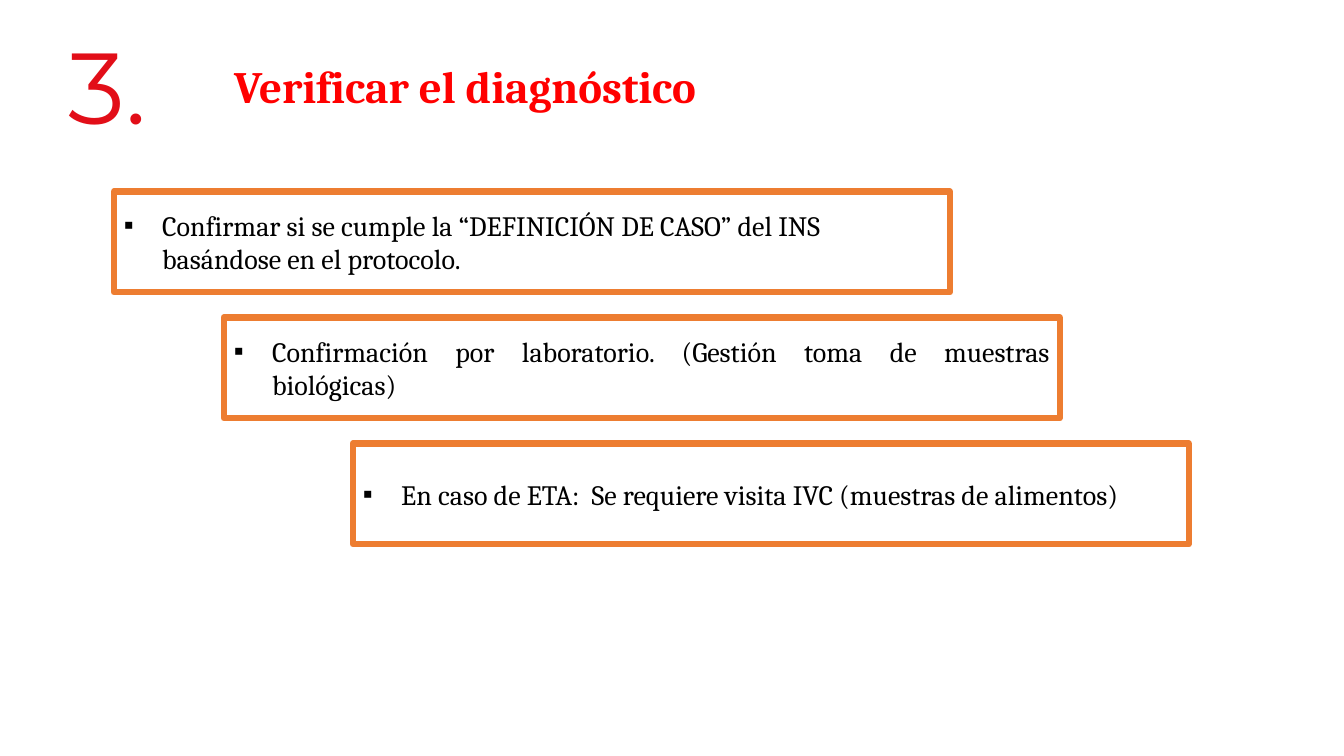
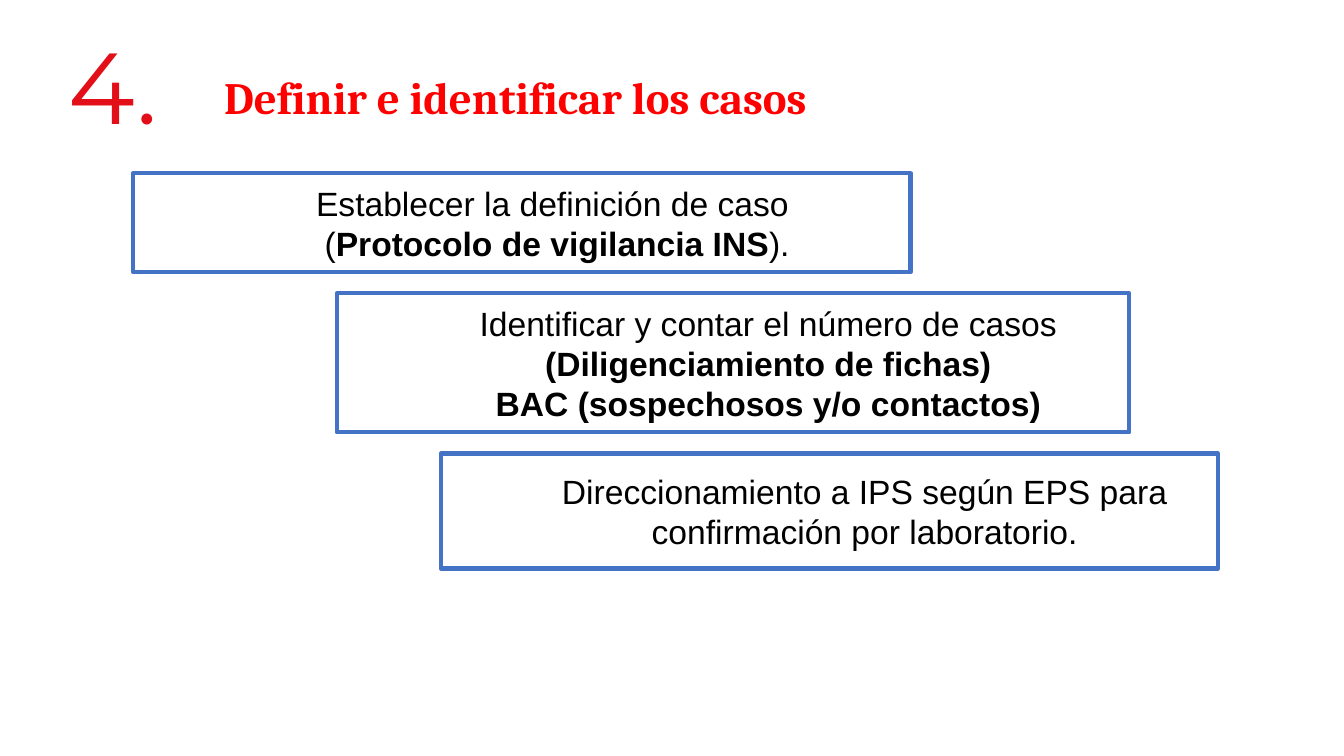
"""Builds two numbered step slides, each with a staircase of outlined boxes."""
from lxml import etree
from pptx import Presentation
from pptx.dml.color import RGBColor
from pptx.enum.shapes import MSO_SHAPE as SHAPE
from pptx.enum.text import MSO_ANCHOR as ANCHOR, MSO_AUTO_SIZE as AUTO, PP_ALIGN as AL
from pptx.oxml.ns import qn
from pptx.util import Inches, Pt

COLORS = {"number": "E20E18", "title": "FF0000", "text": "000000", "fill": "FFFFFF",
          "orange": "ED7D31", "blue": "4472C4"}
NUMBER_AT = (0.58, 0.19, 1.48, 1.31)

SLIDES = [
    {"number": "3.", "title": "Verificar el diagnóstico", "title_at": (1.58, 0.53, 6.07, 0.64),
     "line": ("orange", 4.5), "font": ("Cambria", 20), "bullet": "▪", "indent": 0.38,
     "top": 1.9, "gap": 0.25,
     "boxes": [
         (1.13, 8.29, 1, AL.LEFT,
          [[("Confirmar si se cumple la “DEFINICIÓN DE CASO” del INS basándose en el protocolo.", False)]]),
         (2.22, 8.29, 1, AL.JUSTIFY,
          [[("Confirmación por laboratorio. (Gestión toma de muestras biológicas)", False)]]),
         (3.5, 8.29, 1, AL.JUSTIFY,
          [[("En caso de ETA:  Se requiere visita IVC (muestras de alimentos)", False)]]),
     ]},
    {"number": "4.", "title": "Definir e identificar los casos", "title_at": (1.48, 0.64, 7.27, 0.64),
     "line": ("blue", 3), "font": ("Arial", 24), "bullet": None, "indent": 0.7,
     "top": 1.72, "gap": 0.21,
     "boxes": [
         (1.32, 7.71, 0.98, AL.CENTER,
          [[("Establecer la definición de caso ", False)],
           [("(", False), ("Protocolo de vigilancia INS", True), (").", False)]]),
         (3.34, 7.86, 1.38, AL.CENTER,
          [[("Identificar y contar el número de casos", False)],
           [("(Diligenciamiento de fichas)", True)],
           [("BAC (sospechosos y/o contactos)", True)]]),
         (4.37, 7.71, 1.14, AL.CENTER,
          [[("Direccionamiento a IPS según EPS para confirmación por laboratorio.", False)]]),
     ]},
]


def rgb(name):
    return RGBColor.from_string(COLORS[name])


def add_run(p, text, font, size, color, bold=False):
    r = p.add_run()
    r.text = text
    r.font.name, r.font.size, r.font.bold = font, Pt(size), bold
    r.font.color.rgb = rgb(color)


def set_indent(p, indent, bullet):
    pPr = p._p.get_or_add_pPr()
    pPr.set("marL", str(Inches(indent)))
    pPr.set("indent", str(-Inches(indent) if bullet else 0))
    if bullet:
        clr = etree.SubElement(pPr, qn("a:buClr"))
        etree.SubElement(clr, qn("a:srgbClr"), val=COLORS["text"])
        etree.SubElement(pPr, qn("a:buFont"), typeface="Arial")
        etree.SubElement(pPr, qn("a:buChar"), char=bullet)


def add_label(slide, at, text, font, size, color, align, bold=False):
    tf = slide.shapes.add_textbox(*map(Inches, at)).text_frame
    tf.word_wrap, tf.auto_size = True, AUTO.SHAPE_TO_FIT_TEXT
    p = tf.paragraphs[0]
    p.alignment = align
    add_run(p, text, font, size, color, bold)


def add_box(slide, at, data, align, paragraphs):
    sp = slide.shapes.add_shape(SHAPE.RECTANGLE, *map(Inches, at))
    sp.shadow.inherit = False
    sp.fill.solid()
    sp.fill.fore_color.rgb = rgb("fill")
    color, width = data["line"]
    sp.line.color.rgb, sp.line.width = rgb(color), Pt(width)
    etree.SubElement(sp.line._get_or_add_ln(), qn("a:round"))
    tf = sp.text_frame
    tf.word_wrap, tf.vertical_anchor = True, ANCHOR.MIDDLE
    for i, runs in enumerate(paragraphs):
        p = tf.add_paragraph() if i else tf.paragraphs[0]
        p.alignment = align
        set_indent(p, data["indent"], data["bullet"])
        for text, bold in runs:
            add_run(p, text, *data["font"], "text", bold)


def build_slide(prs, data):
    slide = prs.slides.add_slide(prs.slide_layouts[6])
    top = data["top"]
    for left, width, height, align, paragraphs in data["boxes"]:
        add_box(slide, (left, top, width, height), data, align, paragraphs)
        top += height + data["gap"]
    add_label(slide, NUMBER_AT, data["number"], "Montserrat", 72, "number", AL.LEFT)
    add_label(slide, data["title_at"], data["title"], "Cambria", 32, "title", AL.CENTER, True)


def main():
    prs = Presentation()
    prs.slide_width, prs.slide_height = Inches(13.33), Inches(7.5)
    for data in SLIDES:
        build_slide(prs, data)
    prs.save("out.pptx")


if __name__ == "__main__":
    main()
